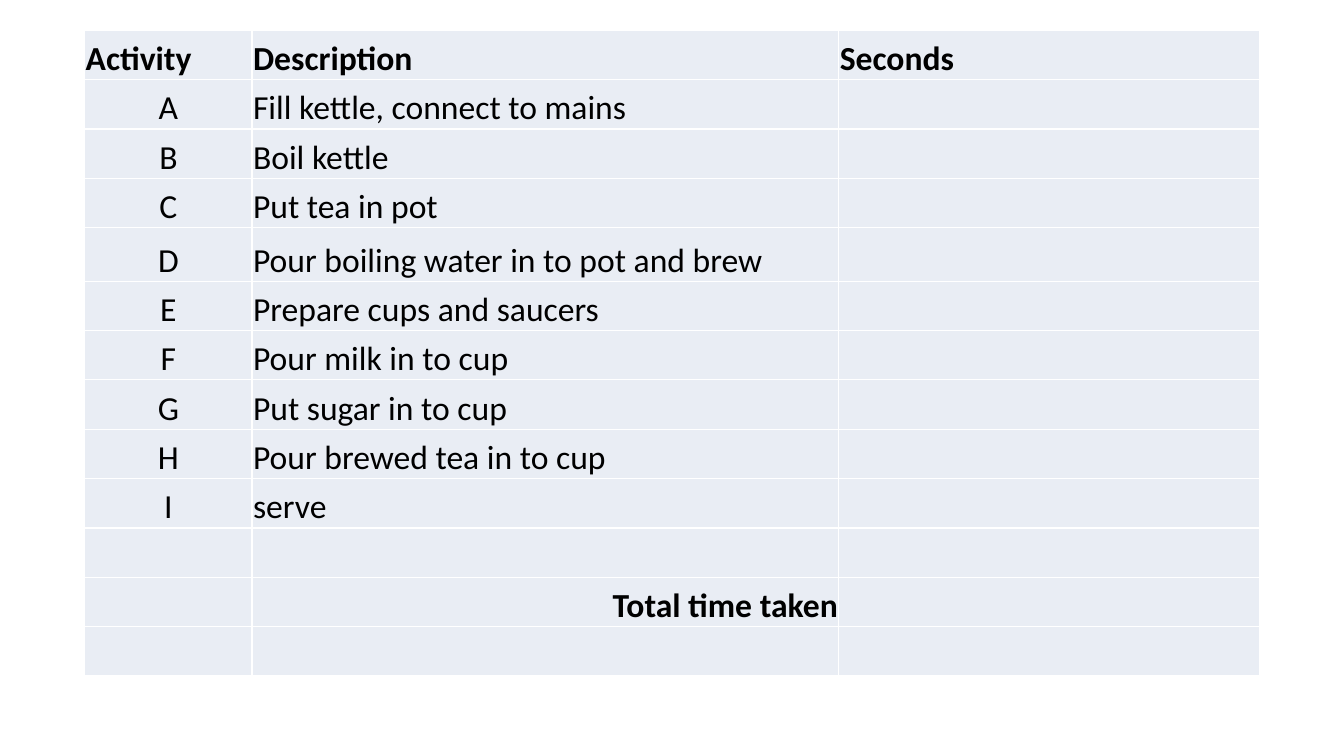
from lxml import etree
from pptx import Presentation
from pptx.dml.color import RGBColor
from pptx.enum.text import MSO_ANCHOR, PP_ALIGN
from pptx.oxml import parse_xml
from pptx.util import Inches, Pt

LEFT, CENTER, RIGHT = PP_ALIGN.LEFT, PP_ALIGN.CENTER, PP_ALIGN.RIGHT
BOTTOM = MSO_ANCHOR.BOTTOM
BLACK = RGBColor(0x00, 0x00, 0x00)
WHITE = RGBColor(0xFF, 0xFF, 0xFF)
PALE = RGBColor(0xE9, 0xED, 0xF4)
NS = "http://schemas.openxmlformats.org/drawingml/2006/main"

STEPS = [
    "Fill kettle, connect to mains",
    "Boil kettle",
    "Put tea in pot",
    "Pour boiling water in to pot and brew",
    "Prepare cups and saucers",
    "Pour milk in to cup",
    "Put sugar in to cup",
    "Pour brewed tea in to cup",
    "serve",
]
TOTAL = "Total time taken"
BLANK = ("", "", "")
HEAD = ("Activity", "Description", "Seconds")
rows = [HEAD]
rows += [(mark, step, "") for mark, step in zip("ABCDEFGHI", STEPS)]
rows += [BLANK, ("", TOTAL, ""), BLANK]
widths = [1.66, 5.82, 4.17]
heights = [0.53 if row[0] == "D" else 0.49 for row in rows]


def add_edges(cell):
    props = cell._tc.get_or_add_tcPr()
    for side in ("lnL", "lnR", "lnT", "lnB"):
        edge = parse_xml(f'<a:{side} xmlns:a="{NS}" w="{Pt(1)}"/>')
        fill = etree.SubElement(edge, f"{{{NS}}}solidFill")
        etree.SubElement(fill, f"{{{NS}}}srgbClr", val=str(WHITE))
        props.append(edge)


deck = Presentation()
deck.slide_width = Inches(13.33)
deck.slide_height = Inches(7.5)
slide = deck.slides.add_slide(deck.slide_layouts[6])

frame = slide.shapes.add_table(
    len(rows), len(widths), Inches(0.84), Inches(0.3),
    Inches(sum(widths)), Inches(sum(heights)))
table = frame.table
table.horz_banding = False
for col, width in zip(table.columns, widths):
    col.width = Inches(width)
for line, height in zip(table.rows, heights):
    line.height = Inches(height)

for r, row in enumerate(rows):
    for c, text in enumerate(row):
        cell = table.cell(r, c)
        add_edges(cell)
        cell.fill.solid()
        cell.fill.fore_color.rgb = PALE
        if not text:
            continue
        cell.vertical_anchor = BOTTOM
        cell.margin_left = cell.margin_right = cell.margin_top = Inches(0.01)
        cell.margin_bottom = 0
        cell.text = text
        para = cell.text_frame.paragraphs[0]
        if text == TOTAL:
            para.alignment = RIGHT
        else:
            para.alignment = CENTER if r and c == 0 else LEFT
        para.font.name = "Calibri"
        para.font.size = Pt(24)
        para.font.bold = r == 0 or text == TOTAL
        para.font.color.rgb = BLACK

deck.save("out.pptx")
